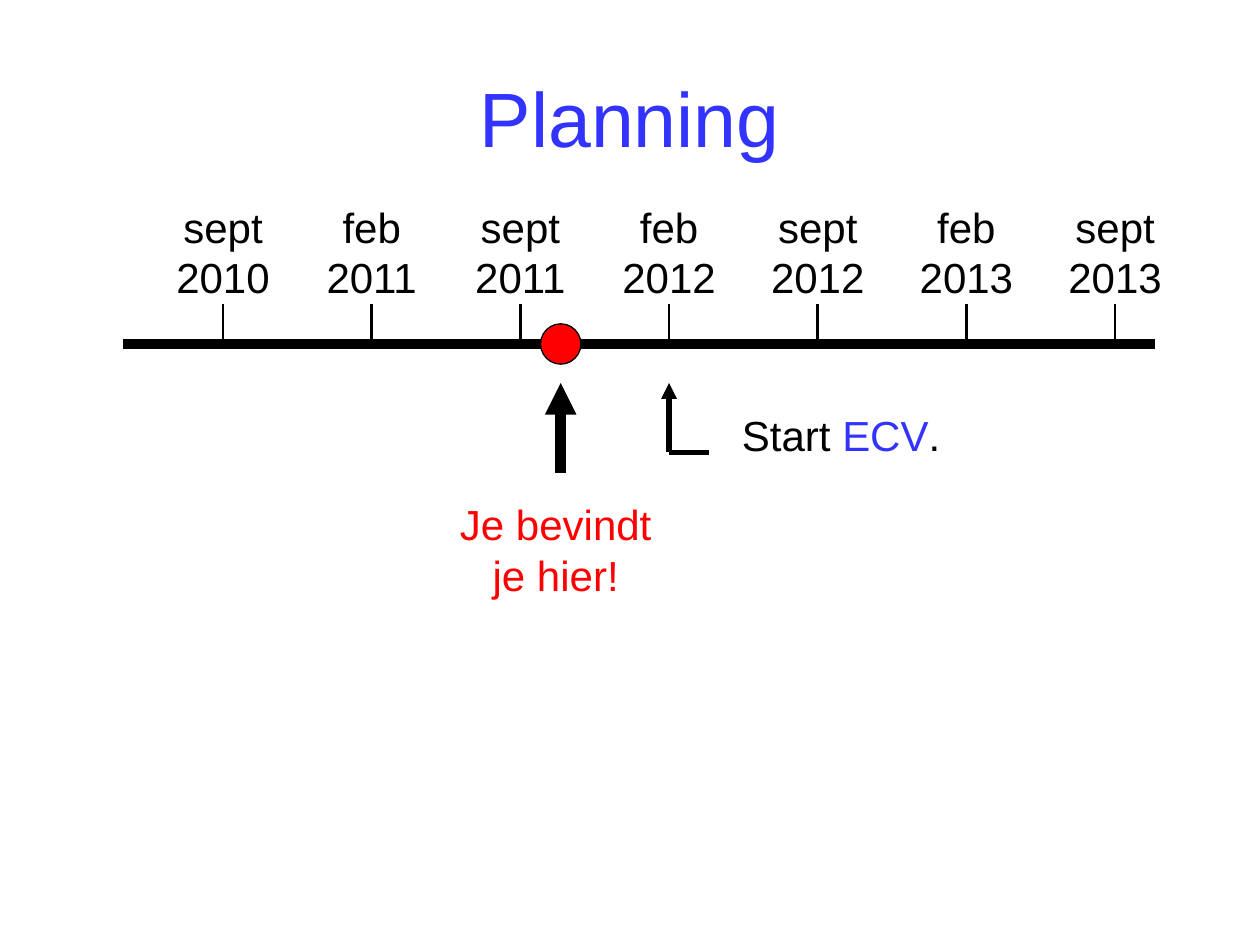
from lxml.etree import SubElement
from pptx import Presentation
from pptx.dml.color import RGBColor
from pptx.enum.shapes import MSO_CONNECTOR as Link, MSO_SHAPE as Preset
from pptx.enum.text import MSO_ANCHOR as Anchor, MSO_AUTO_SIZE as Fit, PP_ALIGN as Align
from pptx.oxml.ns import qn
from pptx.util import Inches, Pt

# Content
TITLE = "Planning"
MOMENTS = [("sept", "2010"), ("feb", "2011"), ("sept", "2011"), ("feb", "2012"),
           ("sept", "2012"), ("feb", "2013"), ("sept", "2013")]
HERE = "Je bevindt je hier!"
START = [("Start ", "ink"), ("ECV", "accent"), (".", "ink")]
START_MOMENT = 3

THEME = {
    "font": "Arial", "title": 44, "body": 24,
    "ink": RGBColor(0, 0, 0),
    "accent": RGBColor(0x33, 0x33, 0xFF),
    "alert": RGBColor(0xFF, 0, 0),
}

# Layout in inches
AXIS_LEFT, AXIS_RIGHT, AXIS_Y = 0.98, 9.17, 2.73
FIRST_TICK, TICK_GAP, TICK_TOP = 1.77, 1.18, 2.41
LABEL_TOP, LABEL_WIDTH, LABEL_HEIGHT = 1.55, 0.95, 0.91
HERE_X, DOT_SIZE = 4.45, 0.32
ARROW_TIP, HERE_ARROW_END, START_ARROW_END = 3.04, 3.75, 3.59


def style_run(run, color, size="body"):
    formats = {"name": THEME["font"], "size": Pt(THEME[size])}
    for key, value in formats.items():
        setattr(run.font, key, value)
    run.font.color.rgb = THEME[color]


def add_line(shapes, start, end, width, arrow=False):
    line = shapes.add_connector(Link.STRAIGHT, *map(Inches, start + end))
    line.line.color.rgb = THEME["ink"]
    line.line.width = Pt(width)
    if arrow:
        SubElement(line.line._get_or_add_ln(), qn("a:tailEnd"), type="triangle")
    SubElement(line._element.spPr, qn("a:effectLst"))


def add_text(shapes, box, lines, align=Align.CENTER, wrap=True):
    frame = shapes.add_textbox(*map(Inches, box)).text_frame
    for key, value in {"word_wrap": wrap, "auto_size": Fit.SHAPE_TO_FIT_TEXT}.items():
        setattr(frame, key, value)
    paragraph = frame.paragraphs[0]
    paragraph.alignment = align
    for index, line in enumerate(lines):
        if index:
            paragraph.add_line_break()
        for words, color in line:
            run = paragraph.add_run()
            run.text = words
            style_run(run, color)


def tick_x(index):
    return FIRST_TICK + index * TICK_GAP


def main():
    deck = Presentation()
    deck.slide_width, deck.slide_height = Inches(10), Inches(7.5)
    slide = deck.slides.add_slide(deck.slide_layouts[5])
    shapes = slide.shapes

    # Title
    title = shapes.title
    title.left, title.top, title.width, title.height = map(Inches, (0.5, 0.3, 9, 1.25))
    title.text_frame.text = TITLE
    title.text_frame.vertical_anchor = Anchor.MIDDLE
    heading = title.text_frame.paragraphs[0]
    heading.alignment = Align.CENTER
    style_run(heading.runs[0], "accent", "title")

    # Time axis with a tick and a label for each moment
    add_line(shapes, (AXIS_LEFT, AXIS_Y), (AXIS_RIGHT, AXIS_Y), 6)
    for index, moment in enumerate(MOMENTS):
        x = tick_x(index)
        add_line(shapes, (x, AXIS_Y), (x, TICK_TOP), 1.5)
        add_text(shapes, (x - LABEL_WIDTH / 2, LABEL_TOP, LABEL_WIDTH, LABEL_HEIGHT),
                 [[(part, "ink")] for part in moment], wrap=False)

    # Current position
    here = shapes.add_group_shape().shapes
    add_line(here, (HERE_X, HERE_ARROW_END), (HERE_X, ARROW_TIP), 6, arrow=True)
    dot = here.add_shape(Preset.OVAL, Inches(HERE_X - DOT_SIZE / 2),
                         Inches(AXIS_Y - DOT_SIZE / 2), Inches(DOT_SIZE), Inches(DOT_SIZE))
    dot.shadow.inherit = False
    dot.fill.solid()
    dot.fill.fore_color.rgb = THEME["alert"]
    dot.line.color.rgb = THEME["ink"]
    dot.line.width = Pt(0.75)
    add_text(here, (3.5, 3.91, 1.82, 0.9), [[(HERE, "alert")]])

    # Start of the course
    start = shapes.add_group_shape().shapes
    start_x = tick_x(START_MOMENT)
    corner = (start_x, START_ARROW_END)
    add_line(start, corner, (start_x, ARROW_TIP), 3, arrow=True)
    add_line(start, corner, (start_x + DOT_SIZE, START_ARROW_END), 3)
    add_text(start, (5.79, 3.2, 3.64, 0.5), [START], Align.LEFT)

    deck.save("out.pptx")


if __name__ == "__main__":
    main()
